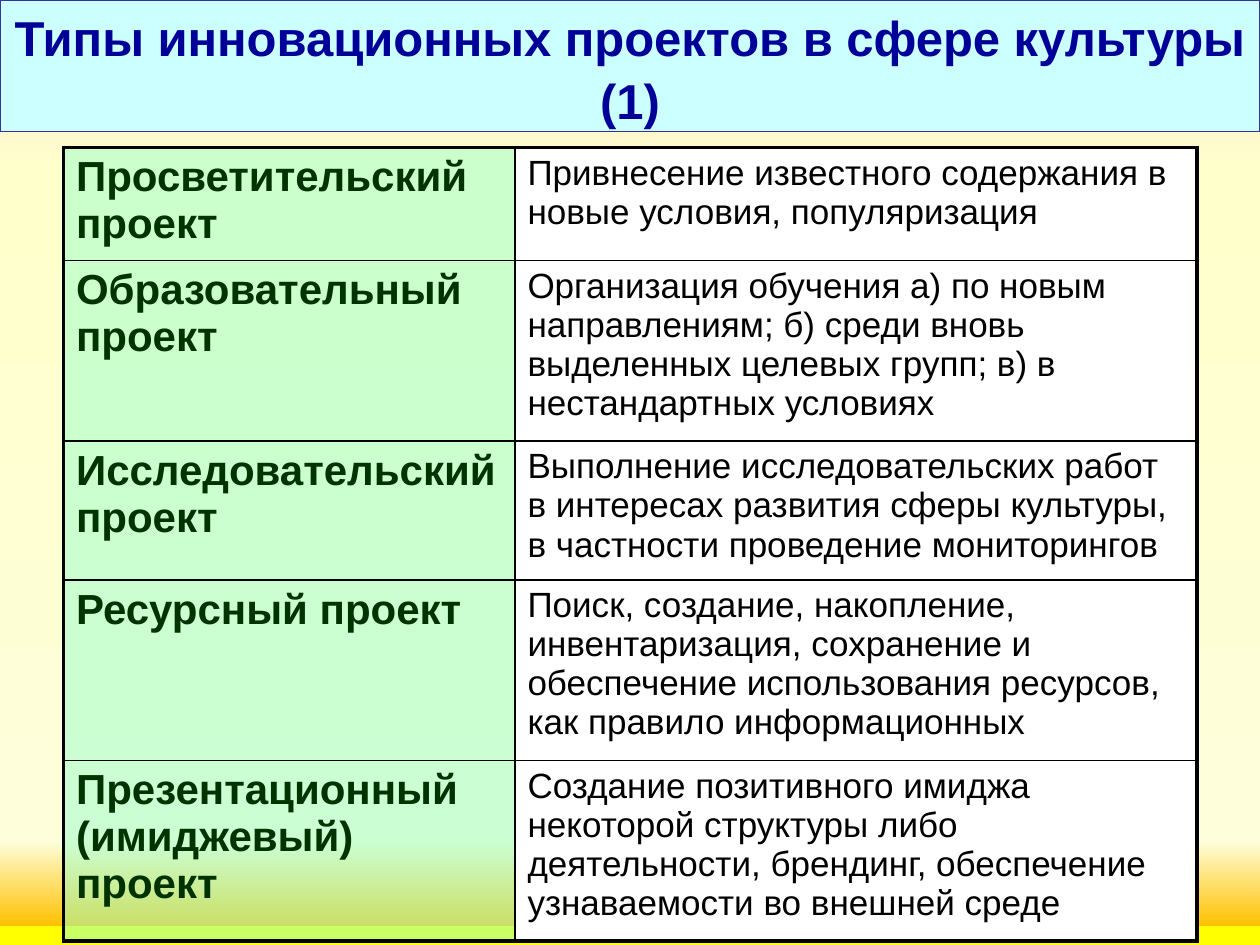
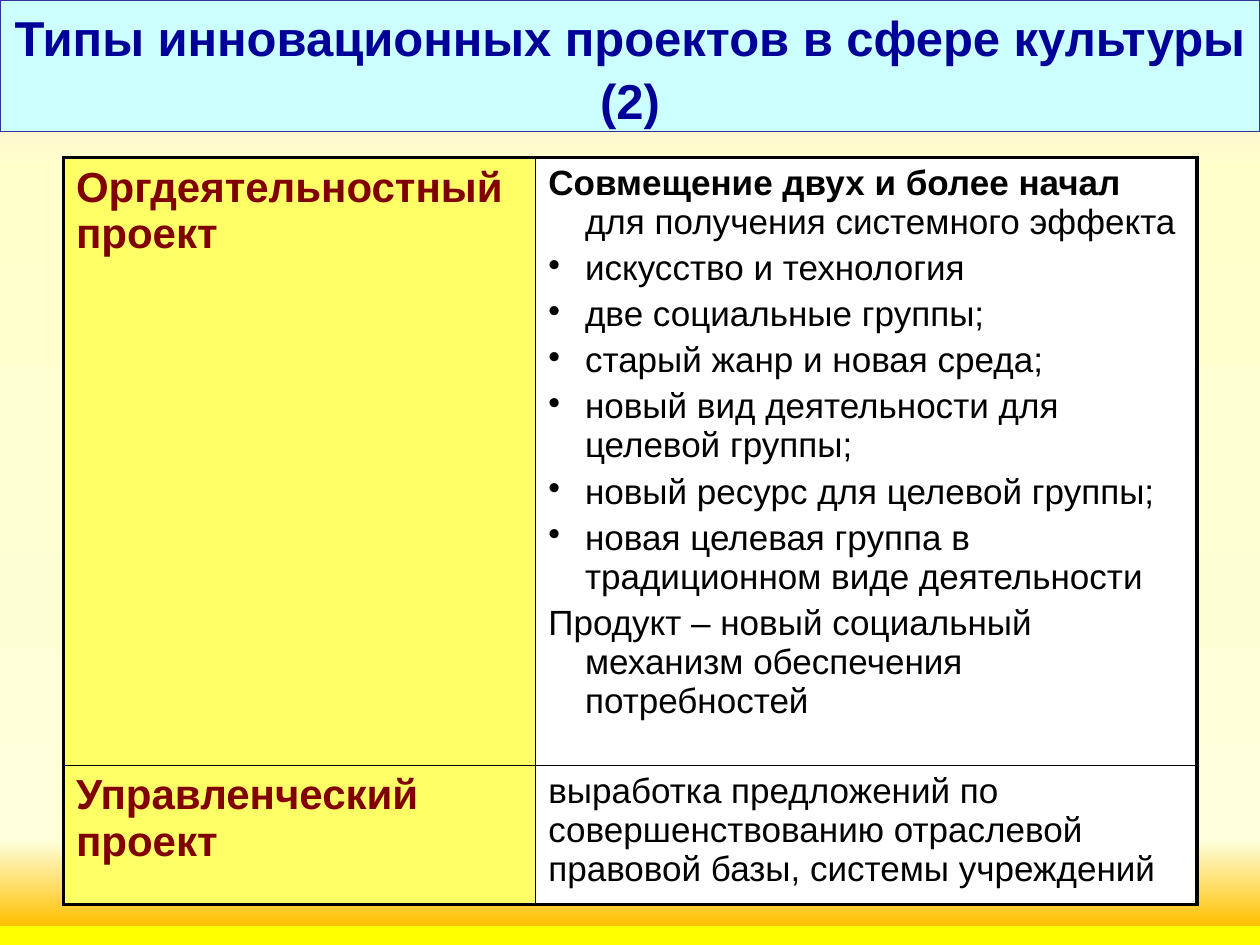
from lxml.etree import SubElement
from pptx import Presentation
from pptx.dml.color import RGBColor
from pptx.enum.shapes import MSO_SHAPE as SHAPE
from pptx.enum.text import MSO_ANCHOR as ANCHOR, PP_ALIGN as ALIGN
from pptx.oxml.ns import qn
from pptx.util import Cm, Pt

FONT = "Arial"
BLACK = RGBColor(0x00, 0x00, 0x00)
WHITE = RGBColor(0xFF, 0xFF, 0xFF)
NAVY = RGBColor(0x00, 0x00, 0x99)
INDIGO = RGBColor(0x33, 0x33, 0x99)
PALE_CYAN = RGBColor(0xCC, 0xFF, 0xFF)
DARK_GREEN = RGBColor(0x00, 0x33, 0x00)
MINT = RGBColor(0x99, 0xFF, 0xCC)
MAROON = RGBColor(0x80, 0x00, 0x00)
YELLOW = RGBColor(0xFF, 0xFF, 0x66)
BACKGROUND_STOPS = [
    (1, RGBColor(0xFF, 0xD9, 0xD9)),
    (18, RGBColor(0xFF, 0xFF, 0xCC)),
    (89, RGBColor(0xFE, 0xFE, 0xDA)),
    (98, RGBColor(0xFF, 0xC0, 0x00)),
    (98, RGBColor(0xFF, 0xFF, 0x00)),
]
TITLE = "Типы инновационных проектов в сфере культуры ({})"
TITLE_BOX = (Cm(0), Cm(0), Cm(25.4), Cm(2.66))
OUTER, INNER = Pt(2.25), Pt(1)
HANGING = Cm(0.74)

BASIC_TYPES = [
    ("Просветительский проект",
     "Привнесение известного содержания в новые условия, популяризация"),
    ("Образовательный проект",
     "Организация обучения а) по новым направлениям; б) среди вновь "
     "выделенных целевых групп; в) в нестандартных условиях"),
    ("Исследовательский проект",
     "Выполнение исследовательских работ в интересах развития сферы "
     "культуры, в частности проведение мониторингов"),
    ("Ресурсный проект",
     "Поиск, создание, накопление, инвентаризация, сохранение и "
     "обеспечение использования ресурсов, как правило информационных"),
    ("Презентационный (имиджевый) проект",
     "Создание позитивного имиджа некоторой структуры либо деятельности, "
     "брендинг, обеспечение узнаваемости во внешней среде"),
]
COMBINATION_LEAD = ("Совмещение двух и более начал ",
                    "для получения системного эффекта")
COMBINATIONS = [
    "искусство и технология",
    "две социальные группы;",
    "старый жанр и новая среда;",
    "новый вид деятельности для целевой группы;",
    "новый ресурс для целевой группы;",
    "новая целевая группа в традиционном виде деятельности",
]
COMBINATION_PRODUCT = ("Продукт – новый социальный механизм обеспечения "
                       "потребностей")
COMPLEX_TYPES = [
    ("Оргдеятельностный проект", ""),
    ("Управленческий проект",
     "выработка предложений по совершенствованию отраслевой правовой базы, "
     "системы учреждений"),
]


def set_background(master):
    """Give the master the vertical gradient that all slides share."""
    fill = master.background.fill
    fill.gradient()
    fill.gradient_angle = 270
    stops = next(master.element.iter(qn("a:gsLst")))
    for stop in list(stops):
        stops.remove(stop)
    for position, color in BACKGROUND_STOPS:
        stop = SubElement(stops, qn("a:gs"), pos=str(position * 1000))
        SubElement(stop, qn("a:srgbClr"), val=str(color))


def format_runs(p, size, color, bold=False):
    """Format every run of a paragraph and the gap before it."""
    p.space_before = Pt(size * 0.2)
    for r in p.runs:
        r.font.name = FONT
        r.font.size = Pt(size)
        r.font.bold = bold
        r.font.color.rgb = color


def hang(p, bullet=None):
    """Give a paragraph a hanging indent and, if asked, a bullet."""
    pPr = p._p.get_or_add_pPr()
    pPr.set("marL", str(HANGING))
    pPr.set("indent", str(-HANGING))
    if bullet:
        SubElement(pPr, qn("a:buChar"), char=bullet)


def add_title(s, box, text):
    """Draw the title band across the box."""
    band = s.shapes.add_shape(SHAPE.RECTANGLE, *box)
    band.shadow.inherit = False
    band.fill.solid()
    band.fill.fore_color.rgb = PALE_CYAN
    band.line.color.rgb = INDIGO
    band.line.width = Pt(0.75)
    tf = band.text_frame
    tf.word_wrap = True
    tf.vertical_anchor = ANCHOR.MIDDLE
    tf.text = text
    p = tf.paragraphs[0]
    p.alignment = ALIGN.CENTER
    format_runs(p, 28, NAVY, bold=True)
    p.space_before = Pt(0)
    p.line_spacing = 1.08


def set_borders(cell, widths):
    """Draw black cell borders from a map of side to width."""
    tcPr = cell._tc.get_or_add_tcPr()
    for side in "LRTB":
        ln = SubElement(tcPr, qn(f"a:ln{side}"), w=str(widths[side]))
        SubElement(SubElement(ln, qn("a:solidFill")), qn("a:srgbClr"),
                   val=str(BLACK))


def fill_cell(cell, color, alpha=None):
    """Fill a cell, with an opacity in percent if given."""
    cell.fill.solid()
    cell.fill.fore_color.rgb = color
    if alpha:
        clr = cell._tc.tcPr.find(qn("a:solidFill")).find(qn("a:srgbClr"))
        SubElement(clr, qn("a:alpha"), val=str(alpha * 1000))


def add_types_table(s, box, name_width, heights, rows, name_color,
                    name_fill, alpha=None):
    """Draw the table of project types and return it."""
    left, top, width = box
    last = len(rows) - 1
    table = s.shapes.add_table(len(rows), 2, left, top, width,
                               sum(heights)).table
    table.first_row = table.horz_banding = False
    table.columns[0].width = name_width
    table.columns[1].width = width - name_width
    for i, (texts, height) in enumerate(zip(rows, heights)):
        table.rows[i].height = height
        for j, text in enumerate(texts):
            cell = table.cell(i, j)
            cell.text = text
            set_borders(cell, {"L": INNER if j else OUTER,
                               "R": OUTER if j else INNER,
                               "T": INNER if i else OUTER,
                               "B": OUTER if i == last else INNER})
        name, description = table.cell(i, 0), table.cell(i, 1)
        fill_cell(name, name_fill, alpha)
        fill_cell(description, WHITE)
        format_runs(name.text_frame.paragraphs[0], 24, name_color, bold=True)
        format_runs(description.text_frame.paragraphs[0], 20, BLACK)
    return table


def write_combinations(tf):
    """Write the lead, the bulleted combinations and the product."""
    lead = tf.paragraphs[0]
    for text in COMBINATION_LEAD:
        lead.add_run().text = text
    format_runs(lead, 20, BLACK)
    lead.runs[0].font.bold = True
    hang(lead)
    for text in COMBINATIONS + [COMBINATION_PRODUCT]:
        p = tf.add_paragraph()
        p.text = text
        format_runs(p, 20, BLACK)
        hang(p, "•" if text in COMBINATIONS else None)


def add_types_slide(prs, number):
    """Add a blank slide with the numbered title."""
    s = prs.slides.add_slide(prs.slide_layouts[6])
    add_title(s, TITLE_BOX, TITLE.format(number))
    return s


def main():
    """Build both slides and save them."""
    prs = Presentation()
    prs.slide_width, prs.slide_height = Cm(25.4), Cm(19.05)
    set_background(prs.slide_master)

    s = add_types_slide(prs, 1)
    heights = [Cm(h) for h in (2.28, 3.64, 2.8, 3.64, 3.64)]
    add_types_table(s, (Cm(1.28), Cm(2.97), Cm(22.85)), Cm(9.1), heights,
                    BASIC_TYPES, DARK_GREEN, MINT, alpha=50)

    s = add_types_slide(prs, 2)
    heights = [Cm(12.25), Cm(2.8)]
    table = add_types_table(s, (Cm(1.28), Cm(3.18), Cm(22.85)), Cm(9.52),
                            heights, COMPLEX_TYPES, MAROON, YELLOW)
    write_combinations(table.cell(0, 1).text_frame)

    prs.save("out.pptx")


if __name__ == "__main__":
    main()
